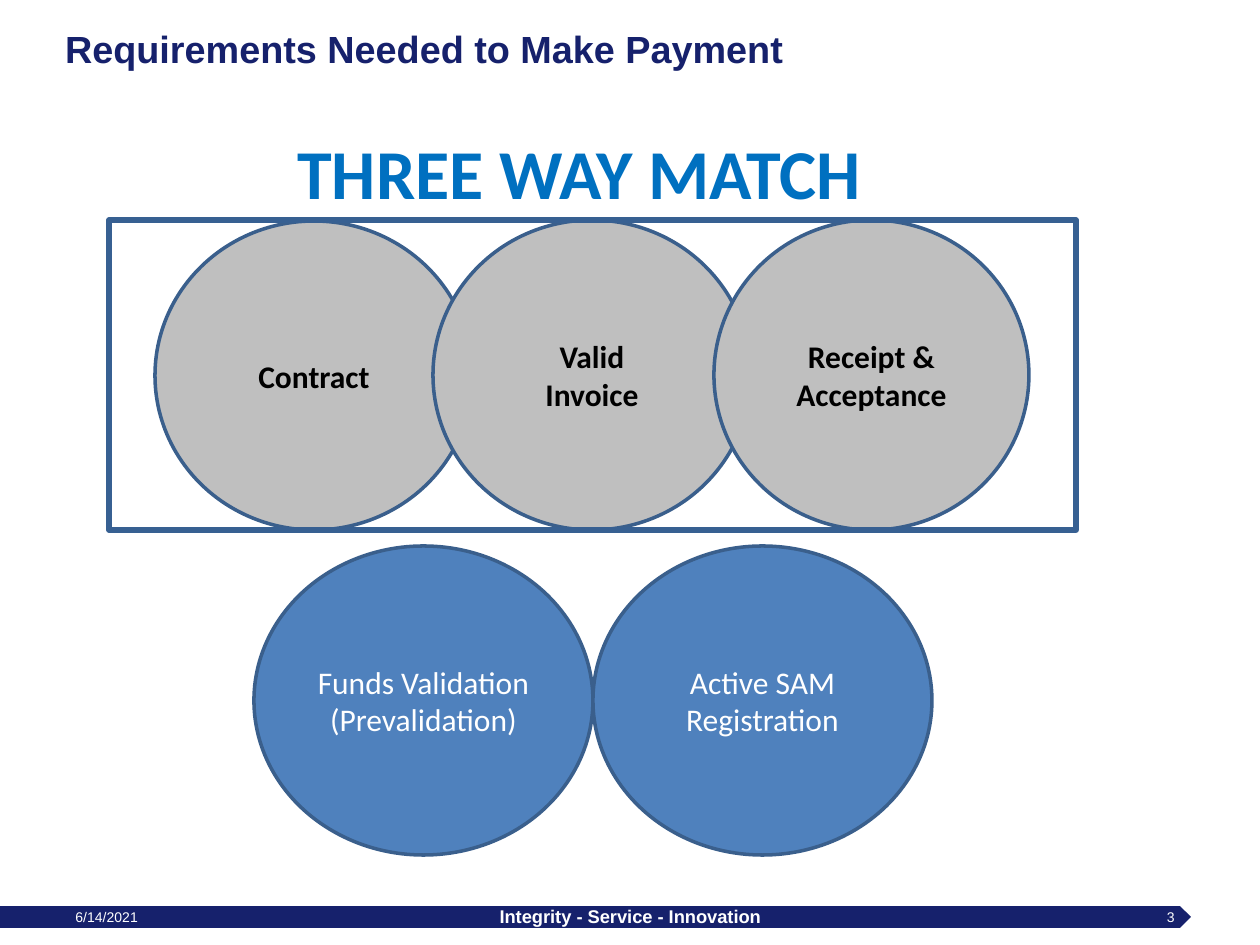
from pptx import Presentation
from pptx.dml.color import RGBColor
from pptx.enum.shapes import MSO_SHAPE as Shape
from pptx.enum.text import MSO_ANCHOR as Anchor, PP_ALIGN as Align
from pptx.util import Emu, Pt

EMU_PER_PX = 914400 / 126
NAVY, WHITE, BLACK = "16216C", "FFFFFF", "000000"
GREY, BLUE, OUTLINE = "BFBFBF", "4F81BD", "3A5F8C"

prs = Presentation()
prs.slide_width, prs.slide_height = Emu(9144000), Emu(6858000)
slide = prs.slides.add_slide(prs.slide_layouts[6])


def add_block(kind, box, fill=None, line=None, line_width=2):
    """Add a preset shape, or a text box when kind is None; box is in px."""
    place = [Emu(round(v * EMU_PER_PX)) for v in box]
    if kind is None:
        return slide.shapes.add_textbox(*place)
    block = slide.shapes.add_shape(kind, *place)
    block.shadow.inherit = False
    if fill:
        block.fill.solid()
        block.fill.fore_color.rgb = RGBColor.from_string(fill)
    else:
        block.fill.background()
    if line:
        block.line.color.rgb = RGBColor.from_string(line)
        block.line.width = Pt(line_width)
    else:
        block.line.fill.background()
    return block


def write(block, lines, size, color, font="Arial", bold=False,
          align=Align.CENTER, anchor=Anchor.MIDDLE):
    frame = block.text_frame
    frame.word_wrap = True
    frame.vertical_anchor = anchor
    for i, line in enumerate(lines):
        paragraph = frame.paragraphs[0] if i == 0 else frame.add_paragraph()
        paragraph.alignment = align
        run = paragraph.add_run()
        run.text = line
        run.font.name, run.font.size, run.font.bold = font, Pt(size), bold
        run.font.color.rgb = RGBColor.from_string(color)


# Title and footer
add_block(Shape.PENTAGON, (0, 906, 1191, 22), NAVY)
title = add_block(None, (42, 22, 1176, 53))
title.text_frame.margin_left = Emu(round(23 * EMU_PER_PX))
write(title, ["Requirements Needed to Make Payment"], 21.6, NAVY,
      bold=True, align=Align.LEFT)

footer = [
    ("6/14/2021", (63, 905, 294, 23), 8, False, Align.LEFT),
    ("Integrity - Service - Innovation", (431, 905, 399, 23), 10.5, True, Align.CENTER),
    ("3", (903, 906, 284, 21), 8, False, Align.RIGHT),
]
for text, box, size, bold, align in footer:
    note = add_block(None, box)
    note.text_frame.margin_top = note.text_frame.margin_bottom = 0
    write(note, [text], size, WHITE, bold=bold, align=align)

# Requirements: the three to be matched, then the two supporting ones
requirements = [
    (["Contract"], (155, 221, 318, 309), GREY, BLACK, True),
    (["Valid", "Invoice"], (433, 220, 318, 310), GREY, BLACK, True),
    (["Funds Validation", "(Prevalidation)"], (254, 546, 339, 309), BLUE, WHITE, False),
    (["Active SAM", "Registration"], (593, 546, 339, 309), BLUE, WHITE, False),
    (["Receipt &", "Acceptance"], (714, 220, 315, 310), GREY, BLACK, True),
]
for lines, box, fill, color, bold in requirements:
    circle = add_block(Shape.OVAL, box, fill, OUTLINE)
    write(circle, lines, 18, color, "Calibri", bold)

# Frame and heading of the match
add_block(Shape.RECTANGLE, (109, 220, 967, 310), line="376092", line_width=3)
heading = add_block(None, (257, 123, 644, 97))
write(heading, ["THREE WAY MATCH"], 40, "0070C0", "Calibri", True, anchor=Anchor.TOP)

prs.save("out.pptx")
